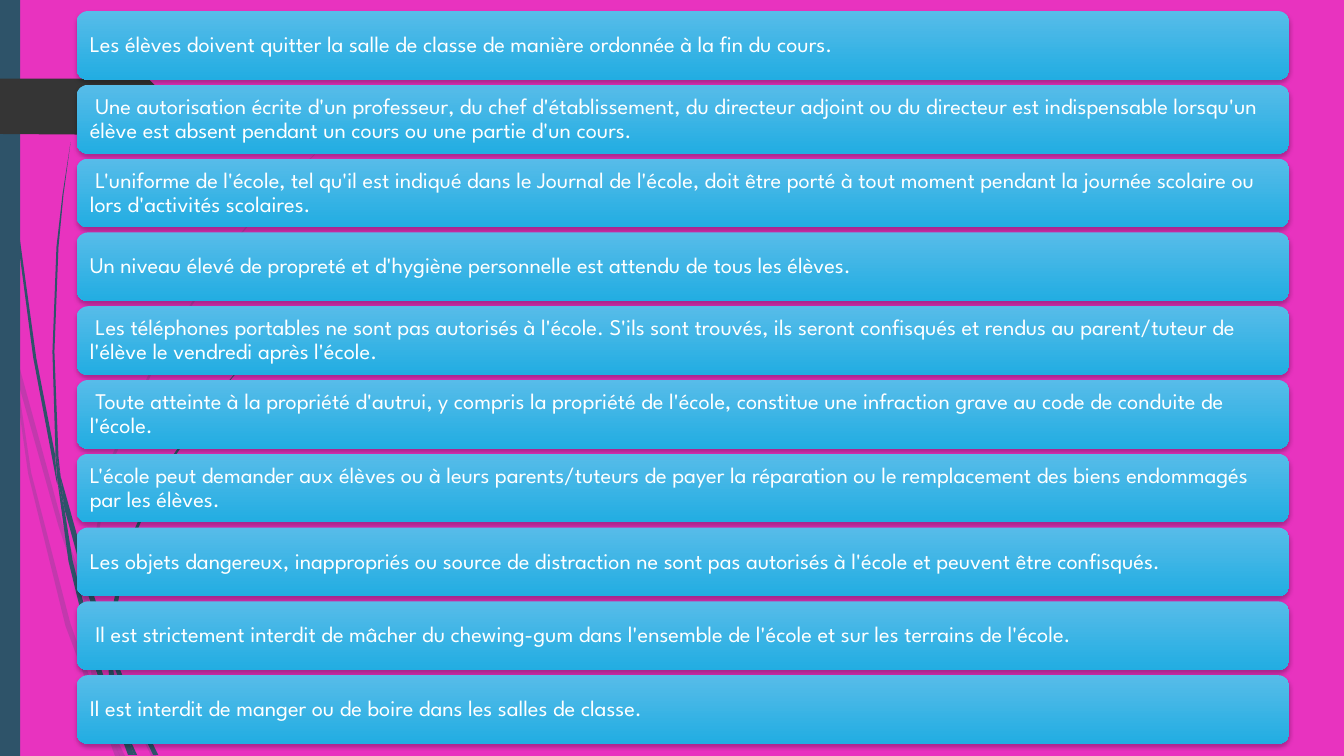
from lxml import etree
from pptx import Presentation
from pptx.dml.color import RGBColor
from pptx.enum.shapes import MSO_SHAPE
from pptx.enum.text import MSO_ANCHOR, PP_ALIGN
from pptx.oxml.ns import qn
from pptx.util import Inches, Pt

RECT, ROUND_RECT = MSO_SHAPE.RECTANGLE, MSO_SHAPE.ROUNDED_RECTANGLE
MIDDLE, LEFT = MSO_ANCHOR.MIDDLE, PP_ALIGN.LEFT

COLORS = {
    "background": "E833BF",
    "stem": "2E5369",
    "tag": "353535",
    "bar_top": "57BCE9",
    "bar_bottom": "22ADE2",
    "text": "FFFFFF",
    "shadow": "000000",
}
FONT = "League Spartan"

RULES = [
    "Les élèves doivent quitter la salle de classe de manière ordonnée à la fin du cours.",
    " Une autorisation écrite d'un professeur, du chef d'établissement, du directeur adjoint ou du directeur "
    "est indispensable lorsqu'un élève est absent pendant un cours ou une partie d'un cours.",
    " L'uniforme de l'école, tel qu'il est indiqué dans le Journal de l'école, doit être porté à tout moment "
    "pendant la journée scolaire ou lors d'activités scolaires.",
    "Un niveau élevé de propreté et d'hygiène personnelle est attendu de tous les élèves.",
    " Les téléphones portables ne sont pas autorisés à l'école. S'ils sont trouvés, ils seront confisqués "
    "et rendus au parent/tuteur de l'élève le vendredi après l'école.",
    " Toute atteinte à la propriété d'autrui, y compris la propriété de l'école, constitue une infraction "
    "grave au code de conduite de l'école.",
    "L'école peut demander aux élèves ou à leurs parents/tuteurs de payer la réparation ou le remplacement "
    "des biens endommagés par les élèves.",
    "Les objets dangereux, inappropriés ou source de distraction ne sont pas autorisés à l'école "
    "et peuvent être confisqués.",
    " Il est strictement interdit de mâcher du chewing-gum dans l'ensemble de l'école "
    "et sur les terrains de l'école.",
    "Il est interdit de manger ou de boire dans les salles de classe.",
]

# Outlines of the grass blades, in inches from the slide's top left corner
PALE_BLADES = [
    [(0.11, 3.5), (0.09, 3.22), (0, 2.82), (0, 2.99), (0.1, 3.44)],
    [(0.58, 5.22), (0.84, 5.99), (0.85, 5.86), (0.62, 5.2), (0.14, 3.45), (0.17, 3.76)],
    [(0.92, 6.07), (0.88, 5.96), (0.88, 6.1), (1.23, 6.94), (1.5, 7.5), (1.55, 7.5), (1.27, 6.92)],
    [(1.19, 7.5), (1.24, 7.5), (1.05, 7.11)],
    [(0.93, 6.83), (0.7, 6.19), (0.31, 4.69), (0.17, 3.76), (0.11, 3.5), (0.28, 4.7),
     (0.65, 6.21), (0.92, 6.93), (1.01, 7.14), (0.99, 7.07)],
    [(0.84, 5.99), (0.87, 6.46), (0.93, 6.83), (0.96, 6.92), (1.05, 7.11), (1.03, 7.06),
     (0.91, 6.46), (0.88, 6.1), (0.88, 6.08)],
    [(0.88, 5.84), (1.1, 4.62), (1.6, 3.49), (2.29, 2.45), (2.68, 1.98), (2.9, 1.75), (3.12, 1.54),
     (3.12, 1.53), (2.89, 1.75), (2.68, 1.97), (2.28, 2.44), (1.58, 3.48), (1.07, 4.61),
     (0.85, 5.84), (0.85, 5.86), (0.88, 5.96)],
    [(1.01, 7.14), (1.14, 7.5), (1.19, 7.5)],
    [(0.88, 6.08), (0.88, 6.1), (0.88, 5.96), (0.85, 5.86), (0.84, 5.99)],
    [(0.96, 6.92), (0.93, 6.83), (0.99, 7.07), (1.01, 7.14), (1.19, 7.5), (1.05, 7.11)],
]
DARK_BLADES = [
    [(0.07, 1.1), (0.17, 2.33), (0.33, 3.55), (0.56, 4.77), (0.57, 4.81), (0.55, 4.57), (0.55, 4.53),
     (0.36, 3.55), (0.19, 2.32), (0.08, 1.09), (0.05, 0.48), (0.04, 0), (0.03, 0), (0.04, 0.48)],
    [(0.88, 5.92), (1.06, 6.45), (1.06, 6.33), (1.06, 6.31), (0.93, 5.9), (0.6, 4.72), (0.64, 5.05)],
    [(1.13, 6.49), (1.1, 6.41), (1.11, 6.56), (1.32, 7.08), (1.52, 7.49), (1.57, 7.49), (1.36, 7.06)],
    [(1.1, 6.91), (0.98, 6.57), (0.72, 5.56), (0.64, 5.05), (0.57, 4.77), (0.68, 5.57),
     (0.93, 6.59), (1.11, 7.08), (1.17, 7.22), (1.16, 7.17)],
    [(0.6, 4.72), (0.58, 4.53), (0.54, 3.49), (0.58, 2.45), (0.63, 1.93), (0.7, 1.41),
     (0.62, 1.93), (0.56, 2.45), (0.52, 3.49), (0.55, 4.49)],
    [(1.33, 7.49), (1.36, 7.49), (1.22, 7.19)],
    [(0.57, 4.77), (0.64, 5.05), (0.6, 4.72), (0.55, 4.49), (0.55, 4.53)],
    [(1.11, 6.33), (1.25, 5.52), (1.58, 4.76), (2.05, 4.06), (2.31, 3.74), (2.45, 3.59), (2.61, 3.44),
     (2.6, 3.44), (2.45, 3.58), (2.31, 3.73), (2.04, 4.05), (1.56, 4.74), (1.22, 5.51),
     (1.06, 6.31), (1.1, 6.41)],
    [(1.17, 7.22), (1.27, 7.49), (1.31, 7.49)],
    [(1.06, 6.45), (1.1, 6.91), (1.16, 7.06), (1.22, 7.19), (1.21, 7.16), (1.11, 6.56), (1.09, 6.51)],
    [(1.06, 6.45), (1.09, 6.51), (1.11, 6.56), (1.1, 6.41), (1.06, 6.31), (1.06, 6.33)],
    [(1.16, 7.06), (1.1, 6.91), (1.16, 7.17), (1.17, 7.22), (1.3, 7.49), (1.33, 7.49), (1.22, 7.19)],
]
TAG = [(0, 0), (1.46, 0), (1.48, 0.01), (1.73, 0.26), (1.74, 0.28), (1.73, 0.3),
       (1.48, 0.55), (1.46, 0.56), (0, 0.55)]


def rgb(name):
    return RGBColor.from_string(COLORS[name])


def paint(sp, color, opacity=100):
    sp.shadow.inherit = False
    sp.line.fill.background()
    sp.fill.solid()
    sp.fill.fore_color.rgb = rgb(color)
    if opacity < 100:
        clr = sp.fill._xPr.find(".//" + qn("a:srgbClr"))
        etree.SubElement(clr, qn("a:alpha"), val=str(opacity * 1000))


def add_outline(s, points, color, left=0, top=0, opacity=100):
    spots = [(Inches(left + x), Inches(top + y)) for x, y in points]
    builder = s.shapes.build_freeform(*spots[0])
    builder.add_line_segments(spots[1:], close=True)
    paint(builder.convert_to_shape(), color, opacity)


def add_decoration(s, left, top, height):
    for blade in PALE_BLADES:
        add_outline(s, blade, "stem", left, top, opacity=20)
    for blade in DARK_BLADES:
        add_outline(s, blade, "stem", left, top)
    band = s.shapes.add_shape(RECT, Inches(left), Inches(top), Inches(0.2), Inches(height))
    paint(band, "stem")
    add_outline(s, TAG, "tag", left, top + 0.78)


def add_soft_shadow(sp):
    sp.shadow.inherit = False
    effects = sp._element.spPr.find(qn("a:effectLst"))
    shadow = etree.SubElement(effects, qn("a:outerShdw"), blurRad=str(Pt(3)), dist=str(Pt(2)),
                              dir="5400000", algn="ctr", rotWithShape="0")
    clr = etree.SubElement(shadow, qn("a:srgbClr"), val=COLORS["shadow"])
    etree.SubElement(clr, qn("a:alpha"), val="25000")


def add_rule_bar(s, text, left, top, width, height):
    sp = s.shapes.add_shape(ROUND_RECT, Inches(left), Inches(top), Inches(width), Inches(height))
    sp.line.fill.background()
    sp.fill.gradient()
    sp.fill.gradient_angle = 270
    for stop, color in zip(sp.fill.gradient_stops, ("bar_top", "bar_bottom")):
        stop.color.rgb = rgb(color)
    add_soft_shadow(sp)
    tf = sp.text_frame
    tf.word_wrap = True
    tf.vertical_anchor = MIDDLE
    tf.margin_left = tf.margin_right = tf.margin_top = tf.margin_bottom = Inches(0.1)
    tf.text = text
    p = tf.paragraphs[0]
    p.alignment = LEFT
    p.line_spacing = 0.9
    p.font.name, p.font.size = FONT, Pt(16)
    p.font.color.rgb = rgb("text")


def add_rule_list(s, left, top, width, height, gap=0.05):
    bar_height = (height + gap) / len(RULES) - gap
    for i, text in enumerate(RULES):
        add_rule_bar(s, text, left, top + i * (bar_height + gap), width, bar_height)


def main():
    prs = Presentation()
    prs.slide_width, prs.slide_height = Inches(13.33), Inches(7.5)
    s = prs.slides.add_slide(prs.slide_layouts[6])
    s.background.fill.solid()
    s.background.fill.fore_color.rgb = rgb("background")
    add_decoration(s, 0, 0, 7.5)
    add_rule_list(s, 0.76, 0.11, 12.03, 7.27)
    prs.save("out.pptx")


if __name__ == "__main__":
    main()
